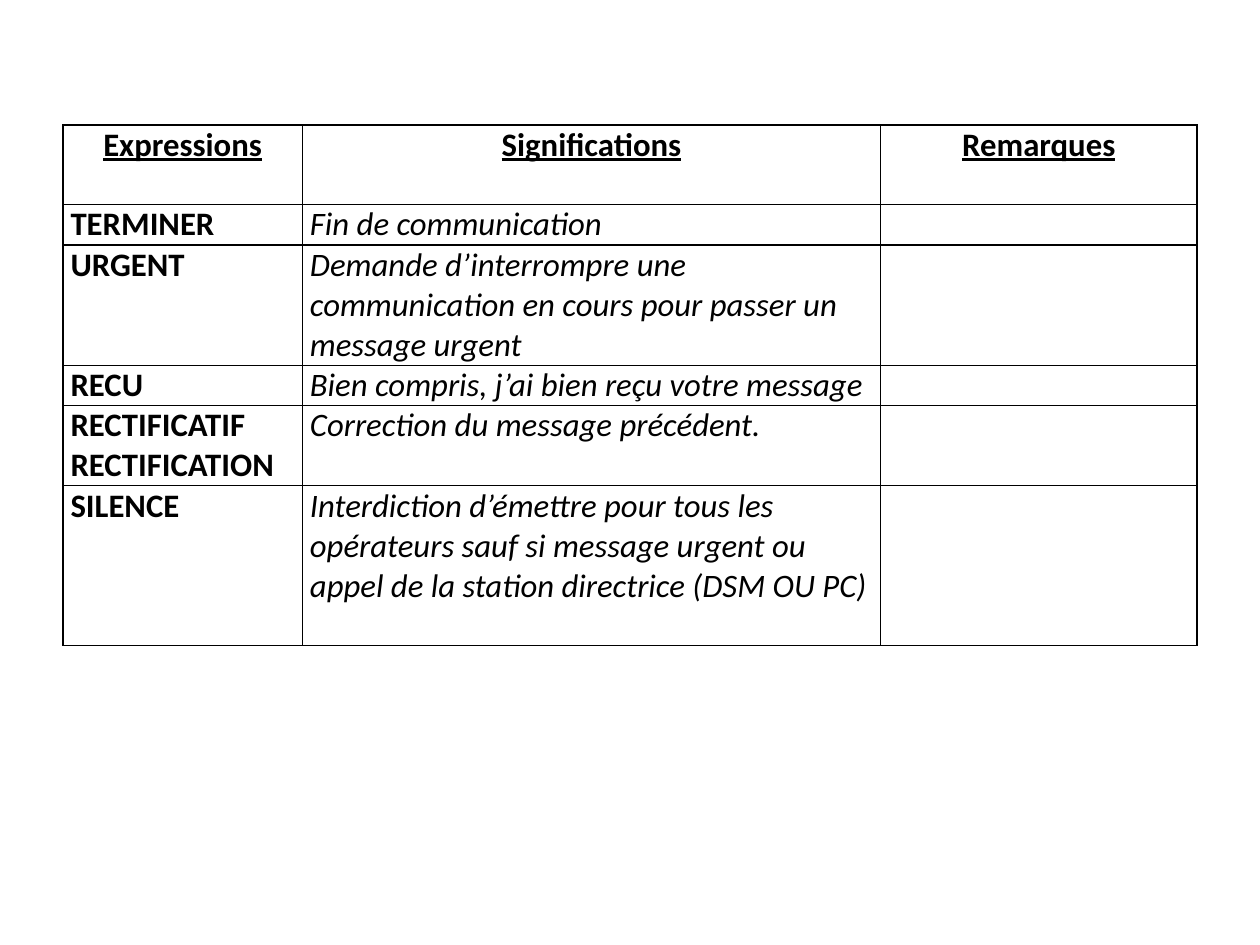
from pptx import Presentation
from pptx.dml.color import RGBColor
from pptx.enum.text import PP_ALIGN
from pptx.oxml import parse_xml
from pptx.oxml.ns import nsdecls
from pptx.util import Inches, Pt

BLACK = RGBColor(0, 0, 0)
LINE_HEIGHT = 0.317
COLUMN_WIDTHS = [1.9, 4.59, 2.51]
HEADERS = ["Expressions", "Significations", "Remarques"]

# Expression, meaning, number of text lines in the row
ENTRIES = [
    ("TERMINER", "Fin de communication", 1),
    ("URGENT", "Demande d’interrompre une communication en cours "
               "pour passer un message urgent", 3),
    ("RECU", "Bien compris, j’ai bien reçu votre message", 1),
    ("RECTIFICATIF\nRECTIFICATION", "Correction du message précédent.", 2),
    ("SILENCE", "Interdiction d’émettre pour tous les opérateurs sauf si message "
                "urgent ou appel de la station directrice (DSM OU PC)", 4),
]


def write_text(cell, text, bold=False, italic=False, underline=False,
               alignment=PP_ALIGN.LEFT):
    cell.text_frame.text = text
    for paragraph in cell.text_frame.paragraphs:
        paragraph.alignment = alignment
        for run in paragraph.runs:
            font = run.font
            font.name = "Calibri"
            font.size = Pt(18.7)
            font.bold = bold
            font.italic = italic
            font.underline = underline
            font.color.rgb = BLACK


def format_cell(cell):
    cell.margin_left = cell.margin_right = Inches(0.06)
    cell.margin_top = cell.margin_bottom = 0
    properties = cell._tc.get_or_add_tcPr()
    for side in ("lnL", "lnR", "lnT", "lnB"):
        properties.append(parse_xml(
            f'<a:{side} {nsdecls("a")} w="{Pt(1)}"><a:solidFill>'
            f'<a:srgbClr val="{BLACK}"/></a:solidFill></a:{side}>'))
    cell.fill.background()


presentation = Presentation()
presentation.slide_width = Inches(10)
presentation.slide_height = Inches(7.5)
slide = presentation.slides.add_slide(presentation.slide_layouts[6])

# Table grid: the header is two lines high
line_counts = [2] + [lines for _, _, lines in ENTRIES]
table = slide.shapes.add_table(
    len(line_counts), len(COLUMN_WIDTHS), Inches(0.5), Inches(0.99),
    Inches(sum(COLUMN_WIDTHS)), Inches(LINE_HEIGHT * sum(line_counts))).table
table.horz_banding = False
for column, width in zip(table.columns, COLUMN_WIDTHS):
    column.width = Inches(width)
for row, lines in zip(table.rows, line_counts):
    row.height = Inches(LINE_HEIGHT * lines)
for cell in table.iter_cells():
    format_cell(cell)

# Header row
for index, header in enumerate(HEADERS):
    write_text(table.cell(0, index), header, bold=True, underline=True,
               alignment=PP_ALIGN.CENTER)

# Expressions and their meanings; the remarks stay empty
for index, (expression, meaning, _) in enumerate(ENTRIES, start=1):
    write_text(table.cell(index, 0), expression, bold=True)
    write_text(table.cell(index, 1), meaning, italic=True)

presentation.save("out.pptx")
